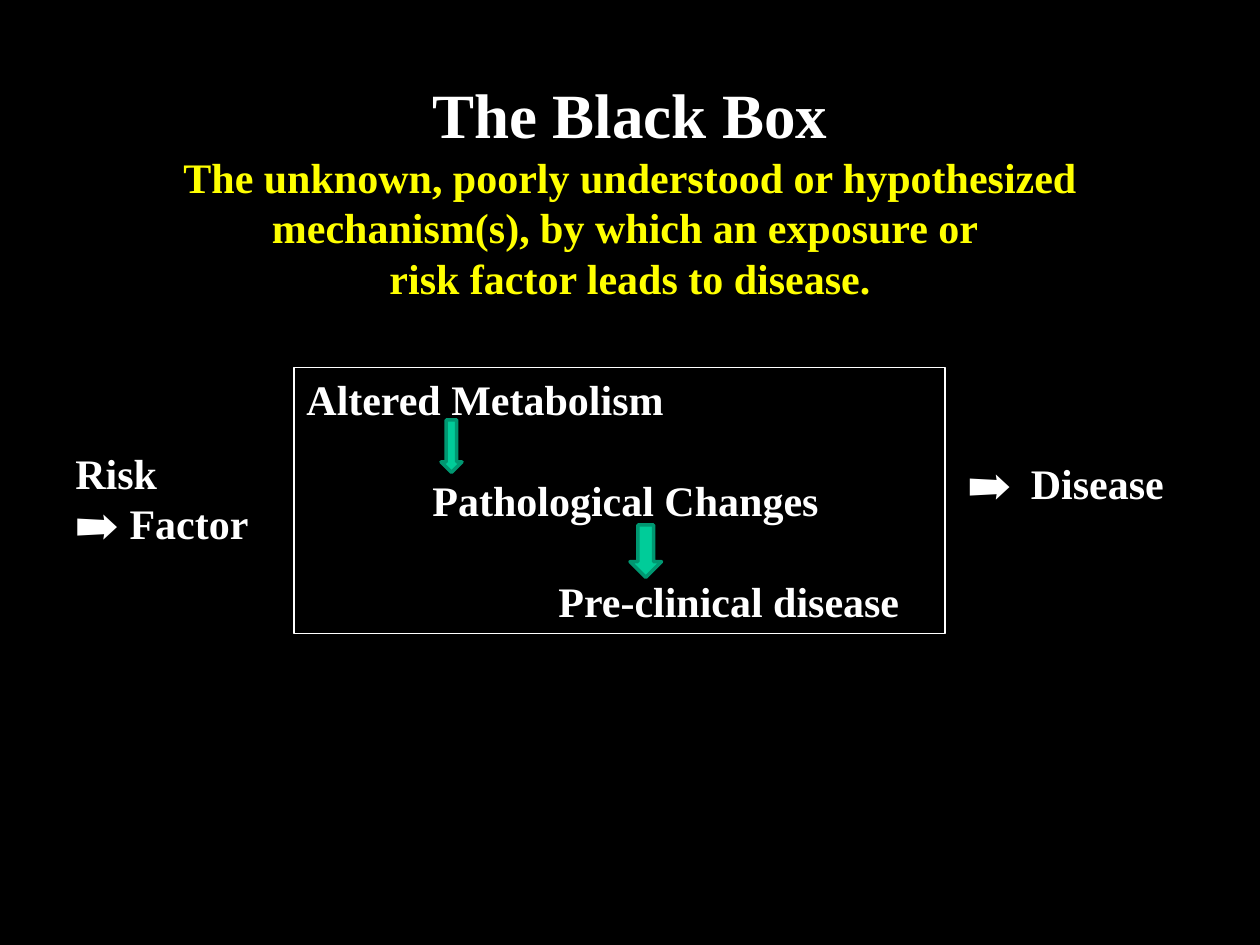
from pptx import Presentation
from pptx.dml.color import RGBColor
from pptx.enum.shapes import MSO_SHAPE
from pptx.enum.text import MSO_ANCHOR, PP_ALIGN
from pptx.util import Pt

RECT, DOWN = MSO_SHAPE.RECTANGLE, MSO_SHAPE.DOWN_ARROW
TOP, MIDDLE = MSO_ANCHOR.TOP, MSO_ANCHOR.MIDDLE
LEFT, CENTER = PP_ALIGN.LEFT, PP_ALIGN.CENTER
FONT = "Times New Roman"
HEX = {"back": "000000", "text": "FFFFFF", "note": "FFFF00",
       "arrow": "00CC99", "edge": "009771"}
COLOR = {name: RGBColor.from_string(code) for name, code in HEX.items()}


def add_run(par, text, size=24, color="text", bold=True):
    run = par.add_run()
    run.text = text
    font = run.font
    font.name, font.size, font.bold = FONT, Pt(size), bold
    font.color.rgb = COLOR[color]


def add_box(left, top, width, height, anchor=TOP):
    """Add a wrapping text box and return its first paragraph."""
    box = slide.shapes.add_textbox(Pt(left), Pt(top), Pt(width), Pt(height))
    box.text_frame.word_wrap = True
    box.text_frame.vertical_anchor = anchor
    return box.text_frame.paragraphs[0]


deck = Presentation()
deck.slide_width, deck.slide_height = Pt(720), Pt(540)
slide = deck.slides.add_slide(deck.slide_layouts[6])
slide.background.fill.solid()
slide.background.fill.fore_color.rgb = COLOR["back"]

# Title and definition
title = add_box(54, 48, 612, 120, MIDDLE)
title.alignment = CENTER
add_run(title, "The Black Box", 36)
title.add_line_break()
add_run(title, "The unknown, poorly understood or hypothesized "
        "mechanism(s), by which an exposure or ", color="note")
title.add_line_break()
add_run(title, "risk factor leads to disease.", color="note")

# The box, each stage one inch further in
box = slide.shapes.add_shape(RECT, Pt(168), Pt(210), Pt(372), Pt(152))
box.shadow.inherit = False
box.fill.background()
box.line.color.rgb = COLOR["text"]
box.line.width = Pt(0.75)
frame = box.text_frame
frame.word_wrap = True
frame.vertical_anchor = TOP
stages = ["Altered Metabolism", "Pathological Changes", "Pre-clinical disease"]
for i, stage in enumerate(stages):
    par = frame.add_paragraph() if i else frame.paragraphs[0]
    par.alignment = LEFT
    if i:
        par.space_before = Pt(29)
        par._p.get_or_add_pPr().set("marL", str(Pt(72 * i)))
    add_run(par, stage)

# Cause and outcome on either side
cause = add_box(36, 252, 114, 65)
add_run(cause, "Risk")
cause.add_line_break()
add_run(cause, "➡ Factor")

result = add_box(546, 258, 138, 36)
props = result._p.get_or_add_pPr()
props.set("marL", str(Pt(36)))
props.set("indent", str(Pt(-36)))
add_run(result, "➡\t", bold=False)
add_run(result, "Disease")

# Arrows between the stages
for left, top, width in [(252, 240, 12), (360, 300, 18)]:
    arrow = slide.shapes.add_shape(DOWN, Pt(left), Pt(top), Pt(width), Pt(30))
    arrow.shadow.inherit = False
    arrow.fill.solid()
    arrow.fill.fore_color.rgb = COLOR["arrow"]
    arrow.line.color.rgb = COLOR["edge"]
    arrow.line.width = Pt(2)

deck.save("out.pptx")
